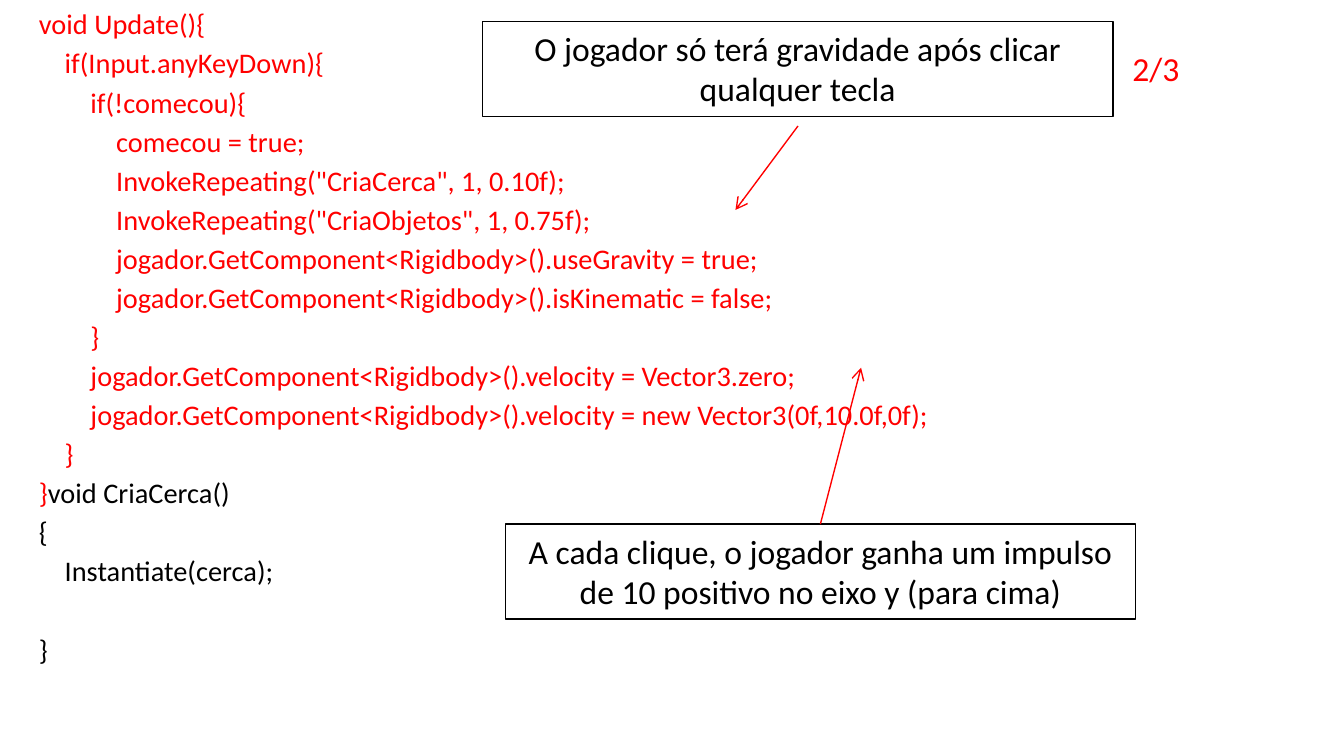
from pptx import Presentation
from pptx.dml.color import RGBColor
from pptx.enum.shapes import MSO_CONNECTOR as Connector, MSO_SHAPE as Shape
from pptx.enum.text import MSO_ANCHOR as Anchor, PP_ALIGN as Align
from pptx.oxml.ns import qn
from pptx.util import Pt
from lxml.etree import SubElement

RED, BLACK = "FF0000", "000000"
FONT = "Calibri"
CODE_SIZE, INDENT, LINE_GAP, EMPTY_LINE = 15.2, 13.8, 2.7, 21.25

# Content: (indent level, code line); None is an empty line
UPDATE_CODE = [
    (0, "void Update(){"),
    (1, "if(Input.anyKeyDown){"),
    (2, "if(!comecou){"),
    (3, "comecou = true;"),
    (3, 'InvokeRepeating("CriaCerca", 1, 0.10f);'),
    (3, 'InvokeRepeating("CriaObjetos", 1, 0.75f);'),
    (3, "jogador.GetComponent<Rigidbody>().useGravity = true;"),
    (3, "jogador.GetComponent<Rigidbody>().isKinematic = false;"),
    (2, "}"),
    (2, "jogador.GetComponent<Rigidbody>().velocity = Vector3.zero;"),
    (2, "jogador.GetComponent<Rigidbody>().velocity = new Vector3(0f,10.0f,0f);"),
    (1, "}"),
    (0, "}"),
]
FENCE_CODE = [
    (0, "void CriaCerca()"),
    (0, "{"),
    (1, "Instantiate(cerca);"),
    None,
    (0, "}"),
]
# Notes: (left, top, text)
NOTES = [
    (258.5, 11.5, "O jogador só terá gravidade após clicar qualquer tecla"),
    (270.7, 280.8, "A cada clique, o jogador ganha um impulso de 10 positivo no eixo y (para cima)"),
]
NOTE_SIZE = (337.7, 50.9)
# Arrows: (from x, from y, to x, to y)
ARROWS = [(439.5, 280.8, 461.3, 197), (427.5, 67.5, 394, 112.5)]


def rgb(color):
    return RGBColor.from_string(color)


def write(paragraph, text, size=18, color=BLACK, align=Align.LEFT, before=0, indent=0):
    paragraph.alignment = align
    paragraph.space_before = Pt(before)
    if indent:
        paragraph._p.get_or_add_pPr().set("marL", str(Pt(indent)))
    run = paragraph.add_run()
    run.text = text
    run.font.name, run.font.size = FONT, Pt(size)
    run.font.color.rgb = rgb(color)


def box(left, top, width, height):
    return [Pt(v) for v in (left, top, width, height)]


deck = Presentation()
deck.slide_width, deck.slide_height = Pt(720), Pt(405)
slide = deck.slides.add_slide(deck.slide_layouts[6])
shapes = slide.shapes

# Code listing
listing = shapes.add_textbox(*box(0, 0, 720, 405)).text_frame
listing.word_wrap = True
gap = 0
paragraph = listing.paragraphs[0]
for color, code in ((RED, UPDATE_CODE), (BLACK, FENCE_CODE)):
    for line in code:
        if line is None:
            gap += EMPTY_LINE
            continue
        level, text = line
        write(paragraph, text, size=CODE_SIZE, color=color, before=gap,
              indent=INDENT * (level + 1))
        gap = LINE_GAP
        if line is not FENCE_CODE[-1]:
            paragraph = listing.add_paragraph()

# Page counter
counter = shapes.add_textbox(*box(551.5, 22.3, 135.4, 29)).text_frame
counter.word_wrap = True
write(counter.paragraphs[0], "2/3", color=RED, align=Align.CENTER)

# Framed notes
for left, top, text in NOTES:
    note = shapes.add_shape(Shape.RECTANGLE, *box(left, top, *NOTE_SIZE))
    note.shadow.inherit = False
    note.fill.background()
    note.line.color.rgb = rgb(BLACK)
    note.line.width = Pt(0.75)
    note.text_frame.word_wrap = True
    note.text_frame.vertical_anchor = Anchor.TOP
    write(note.text_frame.paragraphs[0], text, align=Align.CENTER)

# Arrows from the notes to the code
for ends in ARROWS:
    arrow = shapes.add_connector(Connector.STRAIGHT, *box(*ends))
    arrow.line.color.rgb = rgb(RED)
    arrow.line.width = Pt(0.75)
    SubElement(arrow.line._get_or_add_ln(), qn("a:tailEnd"), type="arrow")
    SubElement(arrow._element.spPr, qn("a:effectLst"))

deck.save("out.pptx")
